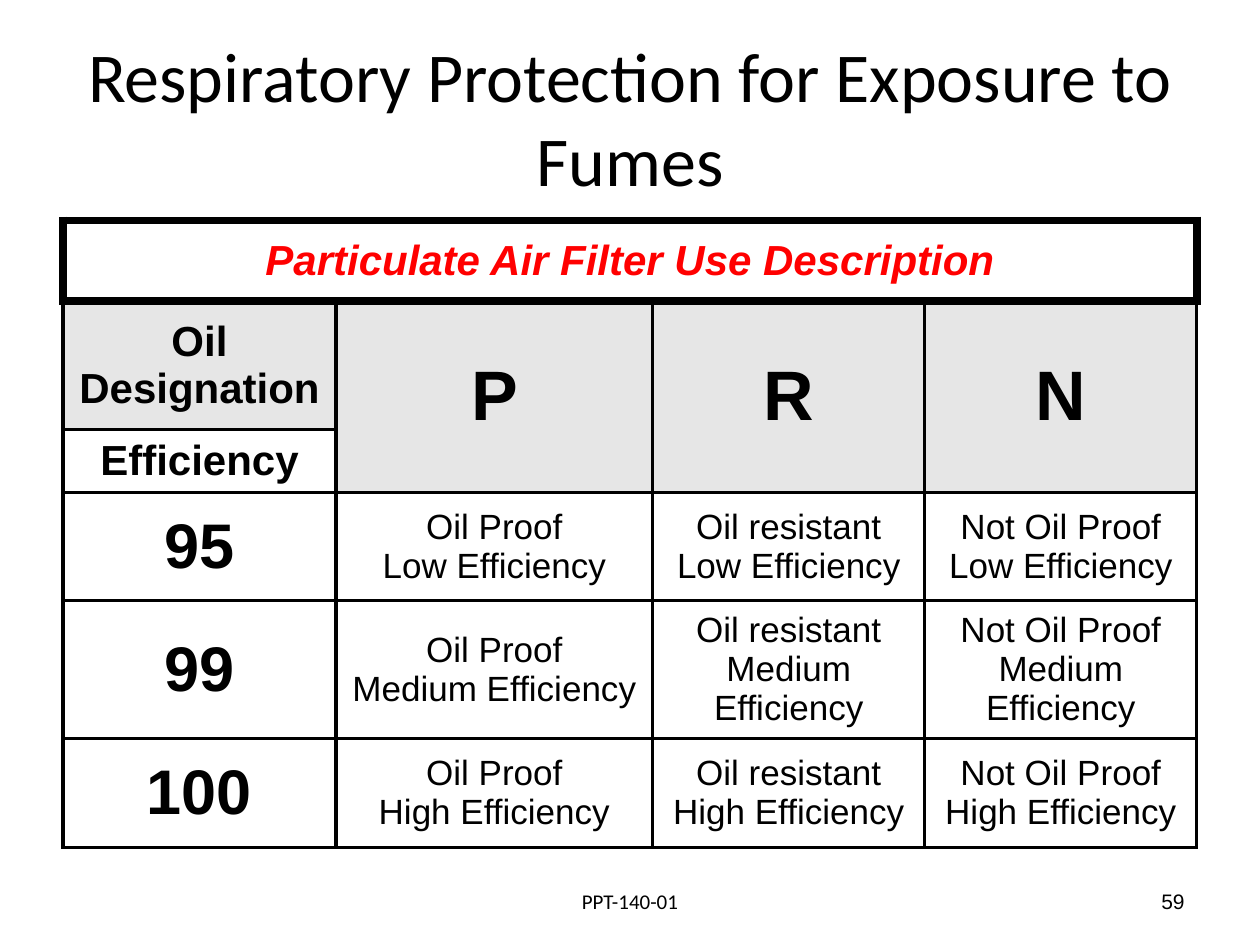
import pptx
import pptx.dml.color
import pptx.enum.text
import pptx.oxml
import pptx.oxml.ns
import pptx.util

Pt = pptx.util.Pt
ALIGN = pptx.enum.text.PP_ALIGN
MIDDLE = pptx.enum.text.MSO_ANCHOR.MIDDLE
BLACK = pptx.dml.color.RGBColor(0, 0, 0)
RED = pptx.dml.color.RGBColor(255, 0, 0)
GREY = pptx.dml.color.RGBColor(230, 230, 230)


def write_text(frame, text, size, font="Arial", color=BLACK, bold=False, italic=False, align=ALIGN.CENTER):
    frame.word_wrap = True
    frame.vertical_anchor = MIDDLE
    for index, line in enumerate(text.split("\n")):
        para = frame.paragraphs[0] if index == 0 else frame.add_paragraph()
        para.alignment = align
        span = para.add_run()
        span.text = line
        span.font.name = font
        span.font.size = Pt(size)
        span.font.color.rgb = color
        span.font.bold = bold
        span.font.italic = italic


def set_borders(cell, widths):
    properties = cell._tc.get_or_add_tcPr()
    for index, (side, width) in enumerate(zip("LRTB", widths)):
        line = pptx.oxml.parse_xml(
            f'<a:ln{side} {pptx.oxml.ns.nsdecls("a")} w="{Pt(width)}">'
            f'<a:solidFill><a:srgbClr val="{BLACK}"/></a:solidFill></a:ln{side}>'
        )
        properties.insert(index, line)


deck = pptx.Presentation()
deck.slide_width = Pt(720)
deck.slide_height = Pt(540)
page = deck.slides.add_slide(deck.slide_layouts[6])

labels = [
    (36, 21.6, 648, 90, "Respiratory Protection for Exposure to Fumes", 40, "Calibri", ALIGN.CENTER),
    (246, 500.5, 228, 28.75, "PPT-140-01", 12, "Calibri", ALIGN.CENTER),
    (516, 500.5, 168, 28.75, "59", 12, "Arial", ALIGN.RIGHT),
]
for left, top, width, height, text, size, font, align in labels:
    box = page.shapes.add_textbox(Pt(left), Pt(top), Pt(width), Pt(height))
    write_text(box.text_frame, text, size, font=font, align=align)

column_widths = [156, 181, 155.5, 155.5]
row_heights = [46, 73.5, 36, 61.5, 79, 62]
table = page.shapes.add_table(
    len(row_heights), len(column_widths), Pt(36), Pt(126), Pt(sum(column_widths)), Pt(sum(row_heights))
).table
table.first_row = False
table.horz_banding = False
for column, width in zip(table.columns, column_widths):
    column.width = Pt(width)
for row, height in zip(table.rows, row_heights):
    row.height = Pt(height)

for row_index in range(len(row_heights)):
    for column_index in range(len(column_widths)):
        cell = table.cell(row_index, column_index)
        if row_index == 1 or (row_index == 2 and column_index > 0):
            cell.fill.solid()
            cell.fill.fore_color.rgb = GREY
        else:
            cell.fill.background()
        set_borders(cell, {0: (5, 5, 5, 5), 1: (2, 2, 5, 2)}.get(row_index, (2, 2, 2, 2)))

table.cell(0, 0).merge(table.cell(0, 3))
for column_index in range(1, 4):
    table.cell(1, column_index).merge(table.cell(2, column_index))

entries = [
    (0, 0, "Particulate Air Filter Use Description", {"size": 24, "color": RED, "bold": True, "italic": True}),
    (1, 0, "Oil\nDesignation", {"size": 24, "bold": True}),
    (2, 0, "Efficiency", {"size": 24, "bold": True}),
]
for column_index, letter in enumerate("PRN", start=1):
    entries.append((1, column_index, letter, {"size": 40, "bold": True}))

oil_ratings = ["Oil Proof", "Oil resistant", "Not Oil Proof"]
for row_index, (number, level) in enumerate([("95", "Low"), ("99", "Medium"), ("100", "High")], start=3):
    entries.append((row_index, 0, number, {"size": 36, "bold": True}))
    for column_index, rating in enumerate(oil_ratings, start=1):
        gap = "\n" if level == "Medium" and column_index > 1 else " "
        entries.append((row_index, column_index, f"{rating}\n{level}{gap}Efficiency", {"size": 20}))

for row_index, column_index, text, style in entries:
    cell = table.cell(row_index, column_index)
    cell.vertical_anchor = MIDDLE
    write_text(cell.text_frame, text, **style)

deck.save("out.pptx")
